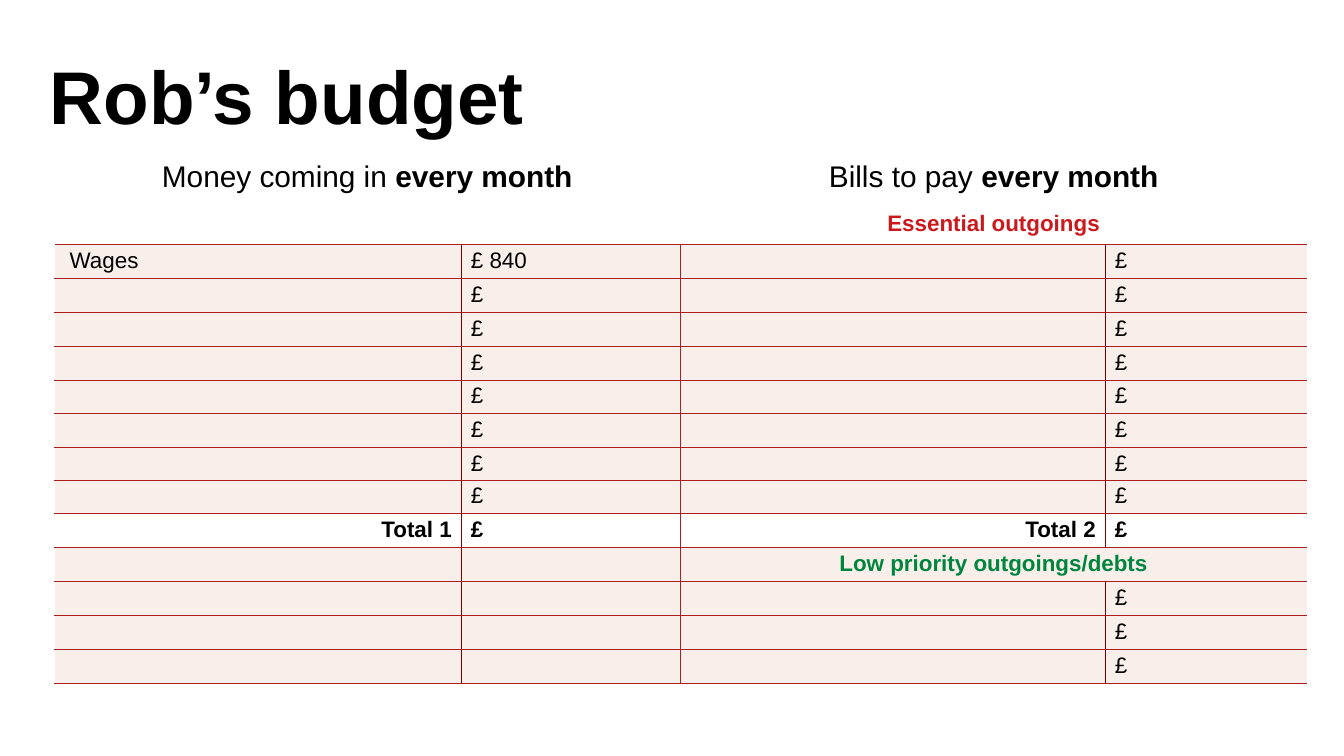
"""Build a slide with a monthly budget table of income and bills."""
from dataclasses import dataclass

from lxml import etree
from pptx import Presentation, table, util as u
from pptx.dml.color import RGBColor
from pptx.enum import text
from pptx.oxml import ns
from pptx.text import text as txt

FONT = "Arial"
BLACK, WHITE, TINT = "000000", "FFFFFF", "F9EFEA"
RED, GREEN, RULE, DIVIDER = "CC191D", "00853F", "AB1D1F", "800000"
COLUMN_WIDTHS = (7.7, 4.14, 8.03, 3.81)
LEFT, CENTER, RIGHT = text.PP_ALIGN.LEFT, text.PP_ALIGN.CENTER, text.PP_ALIGN.RIGHT


@dataclass(frozen=True)
class Entry:
    words: str = ""
    bold_tail: str = ""
    size: float = 12
    color: str = BLACK
    bold: bool = False
    align: text.PP_ALIGN = LEFT


@dataclass(frozen=True)
class BudgetRow:
    entries: tuple[Entry, ...]
    height: float = 0.64
    fill: str | None = TINT
    merged: tuple[int, ...] = ()
    ruled: bool = True


@dataclass(frozen=True)
class Border:
    color: str
    width: float


WHITE_EDGE, THICK_WHITE = Border(WHITE, 0.25), Border(WHITE, 0.75)
THIN_RULE, THICK_RULE = Border(RULE, 0.25), Border(RULE, 0.75)
THIN_DIVIDER = Border(DIVIDER, 0.25)
VERTICALS = (WHITE_EDGE, THIN_DIVIDER, THICK_RULE, THIN_DIVIDER, WHITE_EDGE)

BLANK, POUND = Entry(), Entry("£")


def heading(words: str) -> Entry:
    return Entry(words, "every month", size=16, align=CENTER)


def subheading(words: str, color: str) -> Entry:
    return Entry(words, color=color, bold=True, align=CENTER)


def total(words: str) -> Entry:
    return Entry(words, bold=True, align=RIGHT)


POUND_TOTAL = Entry("£", bold=True)
INCOME_AND_BILLS = BudgetRow((BLANK, POUND, BLANK, POUND))
LOW_PRIORITY = BudgetRow((BLANK, BLANK, BLANK, POUND))

BUDGET = [
    BudgetRow((heading("Money coming in "), BLANK, heading("Bills to pay "), BLANK),
              height=0.97, fill=None, merged=(0, 2), ruled=False),
    BudgetRow((BLANK, BLANK, subheading("Essential outgoings", RED), BLANK),
              height=0.7, fill=WHITE, merged=(2,), ruled=False),
    BudgetRow((Entry(" Wages"), Entry("£ 840"), BLANK, POUND)),
    *[INCOME_AND_BILLS] * 5,
    BudgetRow(INCOME_AND_BILLS.entries, height=0.61),
    INCOME_AND_BILLS,
    BudgetRow((total("Total 1"), POUND_TOTAL, total("Total 2"), POUND_TOTAL), fill=WHITE),
    BudgetRow((BLANK, BLANK, subheading("Low priority outgoings/debts", GREEN), BLANK),
              merged=(2,)),
    *[LOW_PRIORITY] * 3,
]


def rgb(color: str) -> RGBColor:
    return RGBColor.from_string(color)


def write(frame: txt.TextFrame, words: str, *, bold_tail: str = "", size: float = 12,
          color: str = BLACK, bold: bool = False, align: text.PP_ALIGN = LEFT,
          spacing: float | u.Length = 1.15) -> None:
    paragraph = frame.paragraphs[0]
    paragraph.alignment, paragraph.line_spacing = align, spacing
    for part, heavy in ((words, bold), (bold_tail, True)):
        if part:
            run = paragraph.add_run()
            run.text = part
            run.font.name, run.font.size, run.font.bold = FONT, u.Pt(size), heavy
            run.font.color.rgb = rgb(color)
    if not words:
        etree.SubElement(paragraph._p, ns.qn("a:endParaRPr"), sz=str(int(size * 100)))


def add_borders(cell: table._Cell, borders: dict[str, Border]) -> None:
    properties = cell._tc.get_or_add_tcPr()
    for side in "LRTB":
        border = borders[side]
        line = etree.SubElement(properties, ns.qn(f"a:ln{side}"), w=str(u.Pt(border.width)))
        solid = etree.SubElement(line, ns.qn("a:solidFill"))
        etree.SubElement(solid, ns.qn("a:srgbClr"), val=border.color)


def horizontal(boundary: int) -> Border:
    """Choose the rule above the row with this index."""
    if boundary < len(BUDGET) and not BUDGET[boundary].ruled:
        return THICK_WHITE
    return THIN_RULE if BUDGET[boundary - 1].ruled else THICK_RULE


def vertical(row: BudgetRow, boundary: int) -> Border:
    return VERTICALS[boundary] if row.ruled else THICK_WHITE


def fill_cell(cell: table._Cell, row: BudgetRow, row_index: int, column: int) -> None:
    cell.margin_left = cell.margin_right = u.Cm(0.18)
    cell.margin_top = cell.margin_bottom = 0
    right = column + 2 if column in row.merged else column + 1
    add_borders(cell, {"L": vertical(row, column), "R": vertical(row, right),
                       "T": horizontal(row_index), "B": horizontal(row_index + 1)})
    if row.fill:
        cell.fill.solid()
        cell.fill.fore_color.rgb = rgb(row.fill)
    else:
        cell.fill.background()
    entry = row.entries[column]
    write(cell.text_frame, entry.words, bold_tail=entry.bold_tail, size=entry.size,
          color=entry.color, bold=entry.bold, align=entry.align)


def main() -> None:
    deck = Presentation()
    deck.slide_width, deck.slide_height = u.Cm(25.4), u.Cm(14.29)
    slide = deck.slides.add_slide(deck.slide_layouts[5])

    title = slide.shapes.title
    title.left, title.top, title.width, title.height = map(u.Cm, (0.69, 0.61, 18.21, 2.06))
    title.text_frame.vertical_anchor = text.MSO_ANCHOR.TOP
    title.text_frame.auto_size = text.MSO_AUTO_SIZE.NONE
    write(title.text_frame, "Rob’s budget", size=40, bold=True, spacing=u.Pt(54))

    budget = slide.shapes.add_table(
        len(BUDGET), len(COLUMN_WIDTHS), u.Cm(1.02), u.Cm(2.95),
        u.Cm(sum(COLUMN_WIDTHS)), u.Cm(sum(row.height for row in BUDGET))).table
    budget.first_row = budget.horz_banding = False
    for column, width in zip(budget.columns, COLUMN_WIDTHS):
        column.width = u.Cm(width)
    for row_index, row in enumerate(BUDGET):
        budget.rows[row_index].height = u.Cm(row.height)
        for column in row.merged:
            budget.cell(row_index, column).merge(budget.cell(row_index, column + 1))
        for column in range(len(COLUMN_WIDTHS)):
            fill_cell(budget.cell(row_index, column), row, row_index, column)

    deck.save("out.pptx")


if __name__ == "__main__":
    main()
